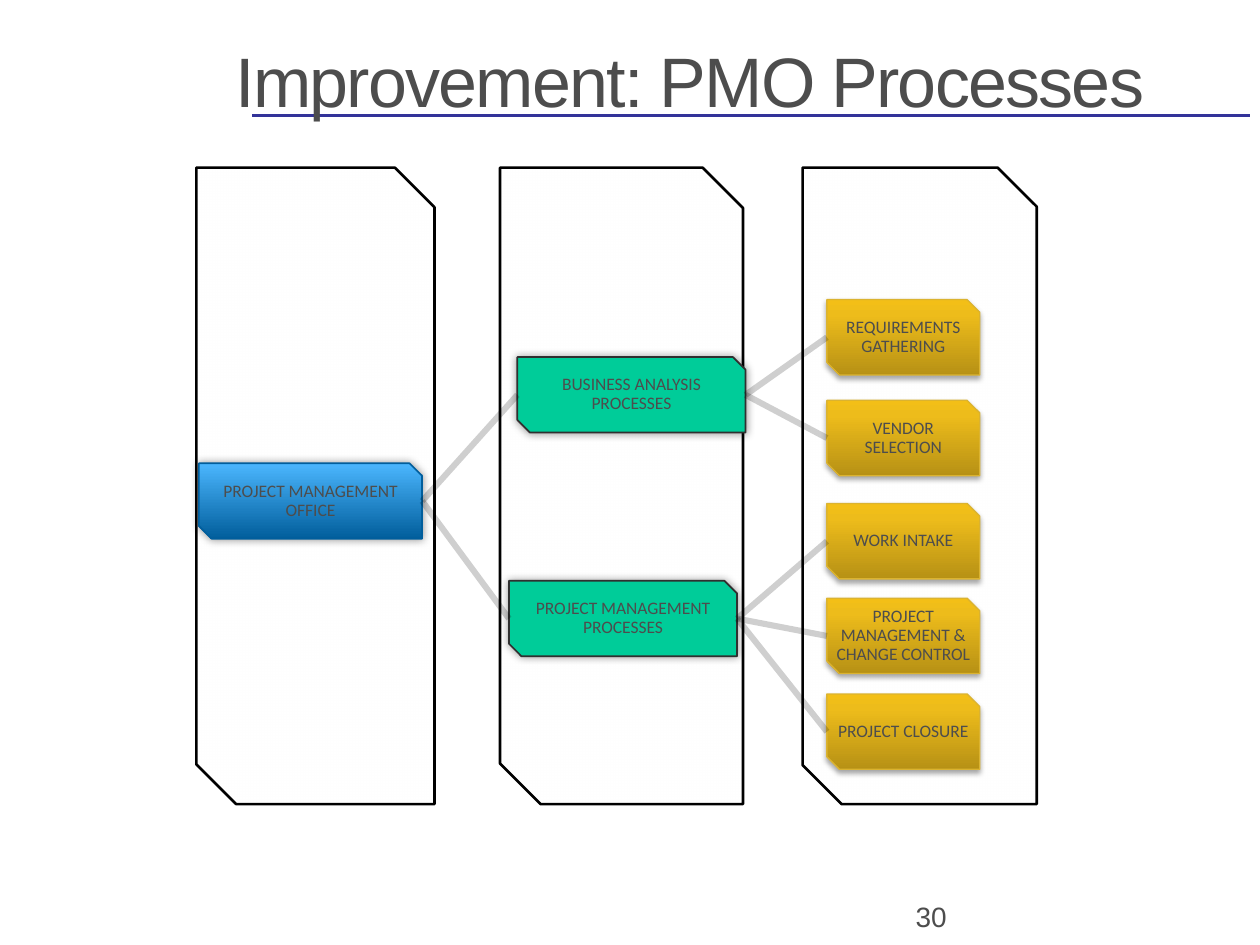
import pptx
import pptx.util
import pptx.dml.color
import pptx.enum.shapes
import pptx.enum.text
import pptx.oxml
import pptx.oxml.ns
from dataclasses import dataclass

Cm, Pt = pptx.util.Cm, pptx.util.Pt
RGB = pptx.dml.color.RGBColor.from_string
SHAPE = pptx.enum.shapes.MSO_SHAPE
ALIGN = pptx.enum.text.PP_ALIGN
ANCHOR = pptx.enum.text.MSO_ANCHOR
qn = pptx.oxml.ns.qn
DRAWING = pptx.oxml.ns.nsdecls("a")


@dataclass(frozen=True)
class Theme:
    text: str = "4D4D4D"
    rule: str = "333399"
    outline: str = "000000"
    link_alpha: int = 19
    heading_font: str = "Arial"
    box_font: str = "Calibri"
    title_size: int = 40
    number_size: int = 16
    box_size: int = 10
    # Gradient stops run top to bottom: position %, colour, opacity %
    panel: tuple = ((0, "FFFFFF", 100), (100, "FFFFFF", 0))
    office: tuple = ((0, "4BB6FE", 100), (100, "015E9C", 100))
    group: tuple = ((0, "00CC99", 100), (100, "00CC99", 100))
    process: tuple = ((0, "F3BF17", 100), (20, "EDBC1B", 100), (100, "B79115", 100))
    office_line: str = "015E9C"
    group_line: str = "303030"
    process_line: str = "DBB330"
    # Shadows: opacity %, blur pt, distance pt
    glow: tuple = (40, 5, 0)
    drop: tuple = (35, 3.1, 1.8)


theme = Theme()


def write_text(frame, text, *, size, font, align=ALIGN.CENTER, anchor=ANCHOR.TOP,
               inset=None, line_spacing=None, tracking=None):
    frame.word_wrap = True
    frame.vertical_anchor = anchor
    if inset is not None:
        frame.margin_left = frame.margin_right = inset
        frame.margin_top = frame.margin_bottom = inset
    paragraph = frame.paragraphs[0]
    paragraph.alignment = align
    paragraph.line_spacing = line_spacing
    run = paragraph.add_run()
    run.text = text
    run.font.size, run.font.name = Pt(size), font
    run.font.color.rgb = RGB(theme.text)
    if tracking is not None:
        run.font._element.set("spc", str(int(tracking * 100)))


def add_snipped(left, top, width, height, stops, line, weight, shadow=None):
    box = slide.shapes.add_shape(SHAPE.SNIP_2_DIAG_RECTANGLE,
                                 Cm(left), Cm(top), Cm(width), Cm(height))
    box.line.color.rgb, box.line.width = RGB(line), Pt(weight)
    box.shadow.inherit = False
    if len({stop[1:] for stop in stops}) == 1:
        box.fill.solid()
        box.fill.fore_color.rgb = RGB(stops[0][1])
    else:
        marks = "".join(
            f'<a:gs pos="{place * 1000}"><a:srgbClr val="{colour}">'
            f'<a:alpha val="{opacity * 1000}"/></a:srgbClr></a:gs>'
            for place, colour, opacity in stops)
        gradient = pptx.oxml.parse_xml(
            f'<a:gradFill {DRAWING} rotWithShape="1"><a:gsLst>{marks}</a:gsLst>'
            '<a:lin ang="5400000" scaled="0"/></a:gradFill>')
        box._element.spPr.find(qn("a:prstGeom")).addnext(gradient)
    if shadow:
        opacity, blur, distance = shadow
        box._element.spPr.find(qn("a:effectLst")).append(pptx.oxml.parse_xml(
            f'<a:outerShdw {DRAWING} blurRad="{Pt(blur)}" dist="{Pt(distance)}" '
            'dir="5400000" rotWithShape="0"><a:srgbClr val="000000">'
            f'<a:alpha val="{opacity * 1000}"/></a:srgbClr></a:outerShdw>'))
    return box


deck = pptx.Presentation()
deck.slide_width, deck.slide_height = Cm(25.4), Cm(19.05)
slide = deck.slides.add_slide(deck.slide_layouts[6])

# Rule under the title
title_rule = slide.shapes.add_connector(pptx.enum.shapes.MSO_CONNECTOR.STRAIGHT,
                                        Cm(5.08), Cm(2.33), Cm(25.2), Cm(2.33))
title_rule.line.color.rgb, title_rule.line.width = RGB(theme.rule), Pt(1.75)
title_rule._element.spPr.append(pptx.oxml.parse_xml(f"<a:effectLst {DRAWING}/>"))

# One tall panel per level, rightmost at the back
for panel_left, panel_width in ((16.18, 4.72), (10.08, 4.9), (3.96, 4.8)):
    add_snipped(panel_left, 3.38, panel_width, 12.83, theme.panel, theme.outline, 1.5)

# Process boxes: label, parent, left, top
OFFICE = "PROJECT MANAGEMENT OFFICE"
MANAGEMENT = "PROJECT MANAGEMENT PROCESSES"
ANALYSIS = "BUSINESS ANALYSIS PROCESSES"
levels = [
    (4.5, theme.office, theme.office_line, 1, theme.glow,
     [(OFFICE, None, 4.01, 9.34)]),
    (4.6, theme.group, theme.group_line, 1, theme.glow,
     [(MANAGEMENT, OFFICE, 10.26, 11.71), (ANALYSIS, OFFICE, 10.43, 7.2)]),
    (3.08, theme.process, theme.process_line, 0.75, theme.drop,
     [("WORK INTAKE", MANAGEMENT, 16.67, 10.15),
      ("PROJECT MANAGEMENT & CHANGE CONTROL", MANAGEMENT, 16.67, 12.06),
      ("PROJECT CLOSURE", MANAGEMENT, 16.67, 13.99),
      ("REQUIREMENTS GATHERING", ANALYSIS, 16.67, 6.04),
      ("VENDOR SELECTION", ANALYSIS, 16.67, 8.07)]),
]
processes, branches = {}, []
for width, stops, line, weight, shadow, members in levels:
    for label, parent, left, top in members:
        process = add_snipped(left, top, width, 1.52, stops, line, weight, shadow)
        write_text(process.text_frame, label, size=theme.box_size, font=theme.box_font,
                   anchor=ANCHOR.MIDDLE, inset=Cm(0.02), line_spacing=0.9)
        processes[label] = process
        if parent:
            branches.append((processes[parent], process))

# Branches from the right side of a parent to the left side of its child;
# a snipped rectangle numbers its sides 0 right, 1 bottom, 2 left, 3 top
for parent, child in branches:
    branch = slide.shapes.add_connector(pptx.enum.shapes.MSO_CONNECTOR.STRAIGHT, 0, 0, 0, 0)
    branch.begin_connect(parent, 0)
    branch.end_connect(child, 2)
    branch.begin_x, branch.begin_y = parent.left + parent.width, parent.top + parent.height // 2
    branch.end_x, branch.end_y = child.left, child.top + child.height // 2
    branch.line.color.rgb, branch.line.width = RGB(theme.outline), Pt(3.5)
    branch_colour = branch._element.spPr.find(".//" + qn("a:srgbClr"))
    branch_colour.append(pptx.oxml.parse_xml(
        f'<a:alpha {DRAWING} val="{theme.link_alpha * 1000}"/>'))
    branch._element.spPr.append(pptx.oxml.parse_xml(f"<a:effectLst {DRAWING}/>"))

# Title and slide number
title = slide.shapes.add_textbox(Cm(3.68), Cm(0.64), Cm(20.45), Cm(2.54))
write_text(title.text_frame, "Improvement: PMO Processes", size=theme.title_size,
           font=theme.heading_font, tracking=-1)
number = slide.shapes.add_textbox(Cm(18.21), Cm(18.01), Cm(5.92), Cm(1.02))
write_text(number.text_frame, "30", size=theme.number_size, font=theme.heading_font,
           align=ALIGN.LEFT)

deck.save("out.pptx")
